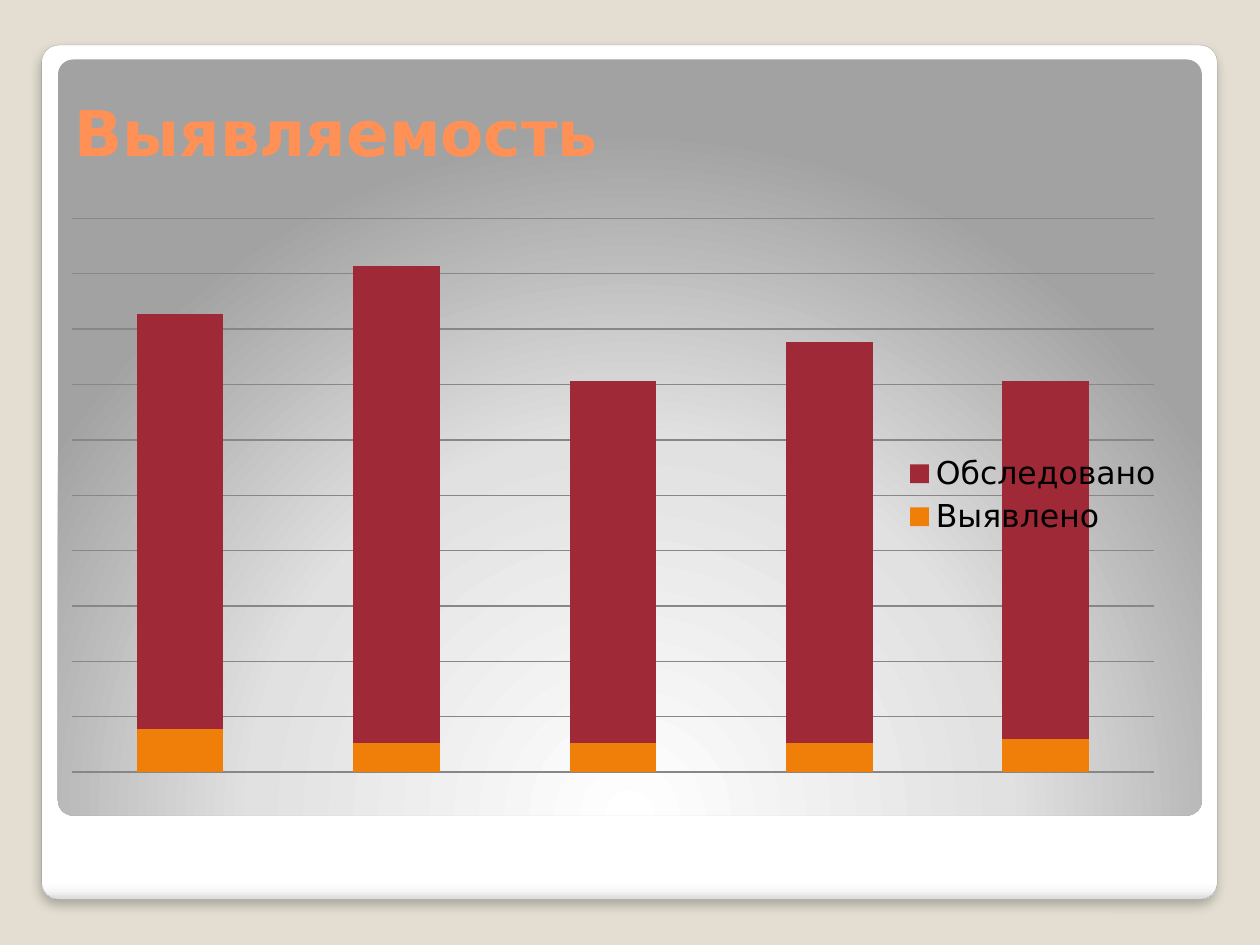
from lxml import etree
from pptx import Presentation
from pptx.chart.data import CategoryChartData
from pptx.dml.color import RGBColor
from pptx.enum.chart import XL_CHART_TYPE, XL_LEGEND_POSITION
from pptx.enum.shapes import MSO_SHAPE
from pptx.enum.text import MSO_ANCHOR, PP_ALIGN
from pptx.oxml import parse_xml
from pptx.oxml.ns import nsdecls, qn
from pptx.util import Cm, Pt

STACKED = XL_CHART_TYPE.COLUMN_STACKED
RIGHT = XL_LEGEND_POSITION.RIGHT
ROUNDED = MSO_SHAPE.ROUNDED_RECTANGLE
MIDDLE = MSO_ANCHOR.MIDDLE
LEFT = PP_ALIGN.LEFT

BEIGE = RGBColor(0xE3, 0xDE, 0xD1)
FRAME_GREY = RGBColor(0xA4, 0xA4, 0xA4)
GRID_GREY = RGBColor(0x87, 0x87, 0x87)
TITLE_ORANGE = RGBColor(0xFF, 0x91, 0x57)
ORANGE = RGBColor(0xF0, 0x7F, 0x09)
CRIMSON = RGBColor(0x9F, 0x29, 0x36)
BLACK = RGBColor(0, 0, 0)
FONT = "DejaVu Sans"

FRAME_STOPS = [(0, "FFFFFF"), (98, "FFFFFF"), (99, "F7F7F7"), (100, "DADADA")]
PANEL_STOPS = [(0, "FFFFFF"), (55, "E1E1E1"), (100, "A2A2A2")]
DOWNWARD = '<a:lin ang="5400000" scaled="0"/>'
FROM_BOTTOM = ('<a:path path="circle"><a:fillToRect l="50000" t="175000" '
               'r="50000" b="-75000"/></a:path>')

YEARS = ["1", "2", "3", "4", "5"]
SERIES = [("Выявлено", (9, 6, 6, 6, 7), ORANGE),
          ("Обследовано", (87, 100, 76, 84, 75), CRIMSON)]
AXIS_TOP = 116


def add_panel(slide, left, top, width, height, stops, direction):
    panel = slide.shapes.add_shape(ROUNDED, Cm(left), Cm(top), Cm(width), Cm(height))
    panel.adjustments[0] = 0.02
    panel.shadow.inherit = False
    panel.line.fill.background()
    marks = "".join(f'<a:gs pos="{pos * 1000}"><a:srgbClr val="{colour}"/></a:gs>'
                    for pos, colour in stops)
    gradient = parse_xml(f'<a:gradFill {nsdecls("a")} rotWithShape="1">'
                         f'<a:gsLst>{marks}</a:gsLst>{direction}</a:gradFill>')
    panel._element.spPr.find(qn("a:prstGeom")).addnext(gradient)
    return panel


def add_frame(slide):
    frame = add_panel(slide, 0.84, 0.91, 23.7, 17.22, FRAME_STOPS, DOWNWARD)
    frame.line.color.rgb = FRAME_GREY
    frame.line.width = Pt(0.16)
    effects = frame._element.spPr.find(qn("a:effectLst"))
    effects.append(parse_xml(
        f'<a:outerShdw {nsdecls("a")} blurRad="{Pt(6)}" dist="{Pt(4)}" dir="5400000" '
        'rotWithShape="0"><a:srgbClr val="000000"><a:alpha val="25000"/></a:srgbClr>'
        '</a:outerShdw>'))


def place_title(slide, text):
    title = slide.shapes.title
    title.left, title.top, title.width, title.height = Cm(1.25), Cm(1.37), Cm(22.6), Cm(2.54)
    frame = title.text_frame
    frame.text = text
    frame.vertical_anchor = MIDDLE
    heading = frame.paragraphs[0]
    heading.alignment = LEFT
    heading.font.name = FONT
    heading.font.size = Pt(36)
    heading.font.bold = True
    heading.font.color.rgb = TITLE_ORANGE
    slide.shapes._spTree.append(title._element)


def fix_plot_area(chart):
    plot_area = chart._chartSpace.chart.plotArea
    for old in plot_area.findall(qn("c:layout")):
        plot_area.remove(old)
    layout = etree.Element(qn("c:layout"))
    manual = etree.SubElement(layout, qn("c:manualLayout"))
    for tag, value in (("layoutTarget", "inner"), ("xMode", "edge"), ("yMode", "edge"),
                       ("x", "0.02"), ("y", "0.02"), ("w", "0.96"), ("h", "0.96")):
        etree.SubElement(manual, qn(f"c:{tag}")).set("val", value)
    plot_area.insert(0, layout)


def add_detection_chart(slide):
    data = CategoryChartData()
    data.categories = YEARS
    for name, values, _ in SERIES:
        data.add_series(name, values)
    chart = slide.shapes.add_chart(STACKED, Cm(0.99), Cm(4.17), Cm(22.73), Cm(11.63),
                                   data).chart
    chart.has_title = False
    chart.font.name = FONT
    chart.font.size = Pt(18)
    chart.font.color.rgb = BLACK
    chart.has_legend = True
    chart.legend.position = RIGHT
    chart.legend.include_in_layout = True

    plot = chart.plots[0]
    plot.gap_width = 150
    plot.overlap = 100
    plot.vary_by_categories = False
    for series, (_, _, colour) in zip(plot.series, SERIES):
        series.format.fill.solid()
        series.format.fill.fore_color.rgb = colour

    chart.category_axis.visible = False
    scale = chart.value_axis
    scale.visible = False
    scale.minimum_scale = 0
    scale.maximum_scale = AXIS_TOP
    scale.major_unit = AXIS_TOP / 10
    scale.has_major_gridlines = True
    scale.major_gridlines.format.line.color.rgb = GRID_GREY
    scale.major_gridlines.format.line.width = Pt(0.75)
    fix_plot_area(chart)


def main():
    deck = Presentation()
    deck.slide_width, deck.slide_height = Cm(25.4), Cm(19.05)
    slide = deck.slides.add_slide(deck.slide_layouts[5])
    slide.background.fill.solid()
    slide.background.fill.fore_color.rgb = BEIGE
    add_frame(slide)
    add_panel(slide, 1.17, 1.2, 23.06, 15.24, PANEL_STOPS, FROM_BOTTOM)
    place_title(slide, "Выявляемость")
    add_detection_chart(slide)
    deck.save("out.pptx")


if __name__ == "__main__":
    main()
